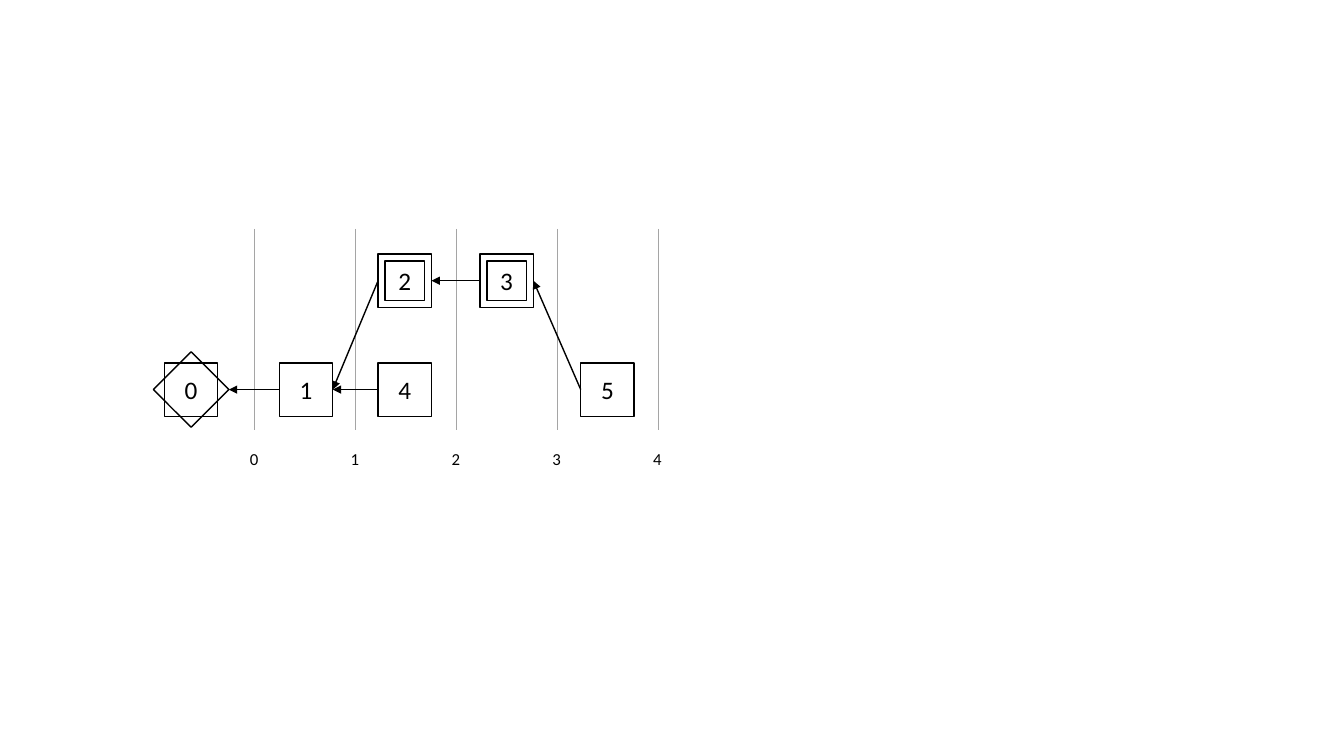
from dataclasses import dataclass

import pptx
import pptx.dml.color
import pptx.enum.shapes
import pptx.enum.text
import pptx.oxml
import pptx.oxml.ns
import pptx.util
from lxml import etree

Inches = pptx.util.Inches
Pt = pptx.util.Pt
SHAPE = pptx.enum.shapes.MSO_SHAPE
BLACK, GRAY = "000000", "A5A5A5"
FONT = "Calibri"
SIDE = 0.53
UPPER, LOWER = 2.52, 3.6
TOP, LEFT, BOTTOM, RIGHT = range(4)


@dataclass
class Block:
    label: str
    left: float
    top: float
    inner_side: float = 0
    inner_turn: float = 0


@dataclass
class Arrow:
    start: str
    end: str


BLOCKS = [
    Block("0", 1.63, LOWER, SIDE, 45),
    Block("1", 2.77, LOWER),
    Block("2", 3.75, UPPER, 0.39),
    Block("3", 4.76, UPPER, 0.39),
    Block("4", 3.75, LOWER),
    Block("5", 5.76, LOWER),
]
ARROWS = [Arrow("4", "1"), Arrow("2", "1"), Arrow("3", "2"), Arrow("5", "3")]


def color(value: str) -> pptx.dml.color.RGBColor:
    return pptx.dml.color.RGBColor.from_string(value)


def write(tf, text: str, size: float):
    tf.text = text
    p = tf.paragraphs[0]
    p.font.name, p.font.size = FONT, Pt(size)
    p.font.color.rgb = color(BLACK)
    return p


def add_tick(shapes, text: str, left: float) -> None:
    tf = shapes.add_textbox(Inches(left), Inches(4.4), Inches(0.29), Inches(0.3)).text_frame
    tf.word_wrap = False
    tf.auto_size = pptx.enum.text.MSO_AUTO_SIZE.SHAPE_TO_FIT_TEXT
    write(tf, text, 12)


def add_square(shapes, left: float, top: float, side: float, turn: float = 0):
    sp = shapes.add_shape(SHAPE.RECTANGLE, Inches(left), Inches(top), Inches(side), Inches(side))
    sp.shadow.inherit = False
    sp.fill.background()
    sp.line.color.rgb, sp.line.width = color(BLACK), Pt(1)
    sp.rotation = turn
    return sp


def add_block(shapes, block: Block):
    if block.inner_side:
        shapes = shapes.add_group_shape().shapes
    sp = add_square(shapes, block.left, block.top, SIDE)
    sp.text_frame.vertical_anchor = pptx.enum.text.MSO_ANCHOR.MIDDLE
    write(sp.text_frame, block.label, 18).alignment = pptx.enum.text.PP_ALIGN.CENTER
    if block.inner_side:
        inset = (SIDE - block.inner_side) / 2
        add_square(shapes, block.left + inset, block.top + inset, block.inner_side, block.inner_turn)
    return sp


def add_arrow(shapes, x1: float, y1: float, x2: float, y2: float):
    cx = shapes.add_connector(
        pptx.enum.shapes.MSO_CONNECTOR.STRAIGHT, Inches(x1), Inches(y1), Inches(x2), Inches(y2))
    cx.line.color.rgb, cx.line.width = color(BLACK), Pt(1)
    etree.SubElement(cx.line._get_or_add_ln(), pptx.oxml.ns.qn("a:tailEnd"), type="triangle")
    etree.SubElement(cx._element.spPr, pptx.oxml.ns.qn("a:effectLst"))
    return cx


def add_border(cell, side: str, value: str = "") -> None:
    fill = f'<a:solidFill><a:srgbClr val="{value}"/></a:solidFill>' if value else "<a:noFill/>"
    cell._tc.get_or_add_tcPr().append(pptx.oxml.parse_xml(
        f'<a:ln{side} {pptx.oxml.ns.nsdecls("a")} w="{Pt(0.5)}">{fill}</a:ln{side}>'))


def add_timeline(shapes) -> None:
    table = shapes.add_table(2, 4, Inches(2.52), Inches(2.27), Inches(4.01), Inches(2)).table
    table.first_row = table.horz_banding = False
    for cell in table.iter_cells():
        for side, value in (("L", GRAY), ("R", GRAY), ("T", ""), ("B", "")):
            add_border(cell, side, value)
        cell.fill.background()


def main() -> None:
    prs = pptx.Presentation()
    prs.slide_width, prs.slide_height = Inches(13.33), Inches(7.5)
    shapes = prs.slides.add_slide(prs.slide_layouts[6]).shapes

    # Time axis
    for i in range(5):
        add_tick(shapes, str(i), 2.38 + i)
    add_timeline(shapes)

    # Blocks
    squares = {block.label: add_block(shapes, block) for block in BLOCKS}

    # Arrows to the parent blocks
    for arrow in ARROWS:
        cx = add_arrow(shapes, 0, 0, 1, 1)
        cx.begin_connect(squares[arrow.start], LEFT)
        cx.end_connect(squares[arrow.end], RIGHT)

    # The first arrow stops at the corner of the turned square
    middle = LOWER + SIDE / 2
    cx = add_arrow(shapes, 2.77, middle, 2.27, middle)
    cx.begin_connect(squares["1"], LEFT)

    prs.save("out.pptx")


if __name__ == "__main__":
    main()
